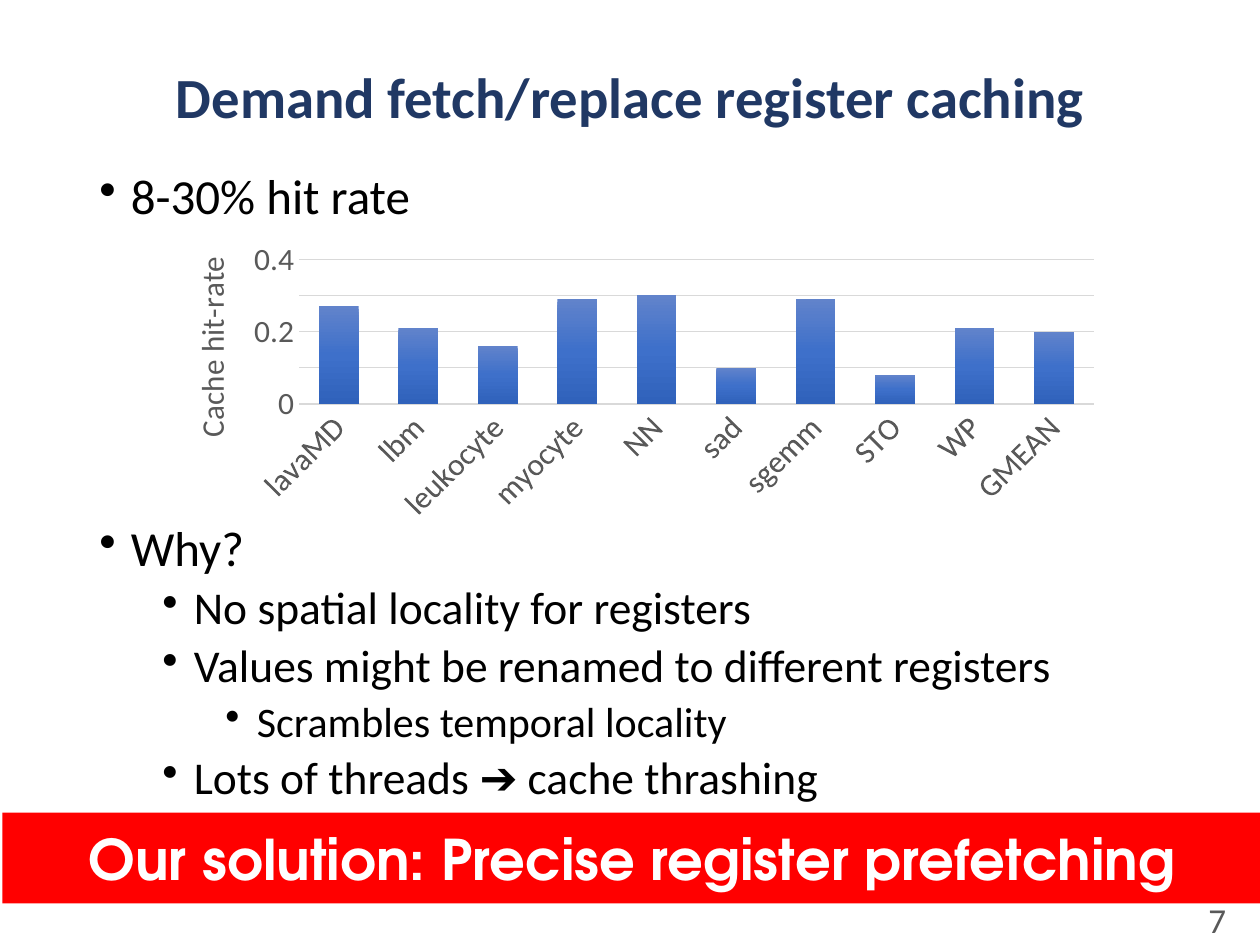
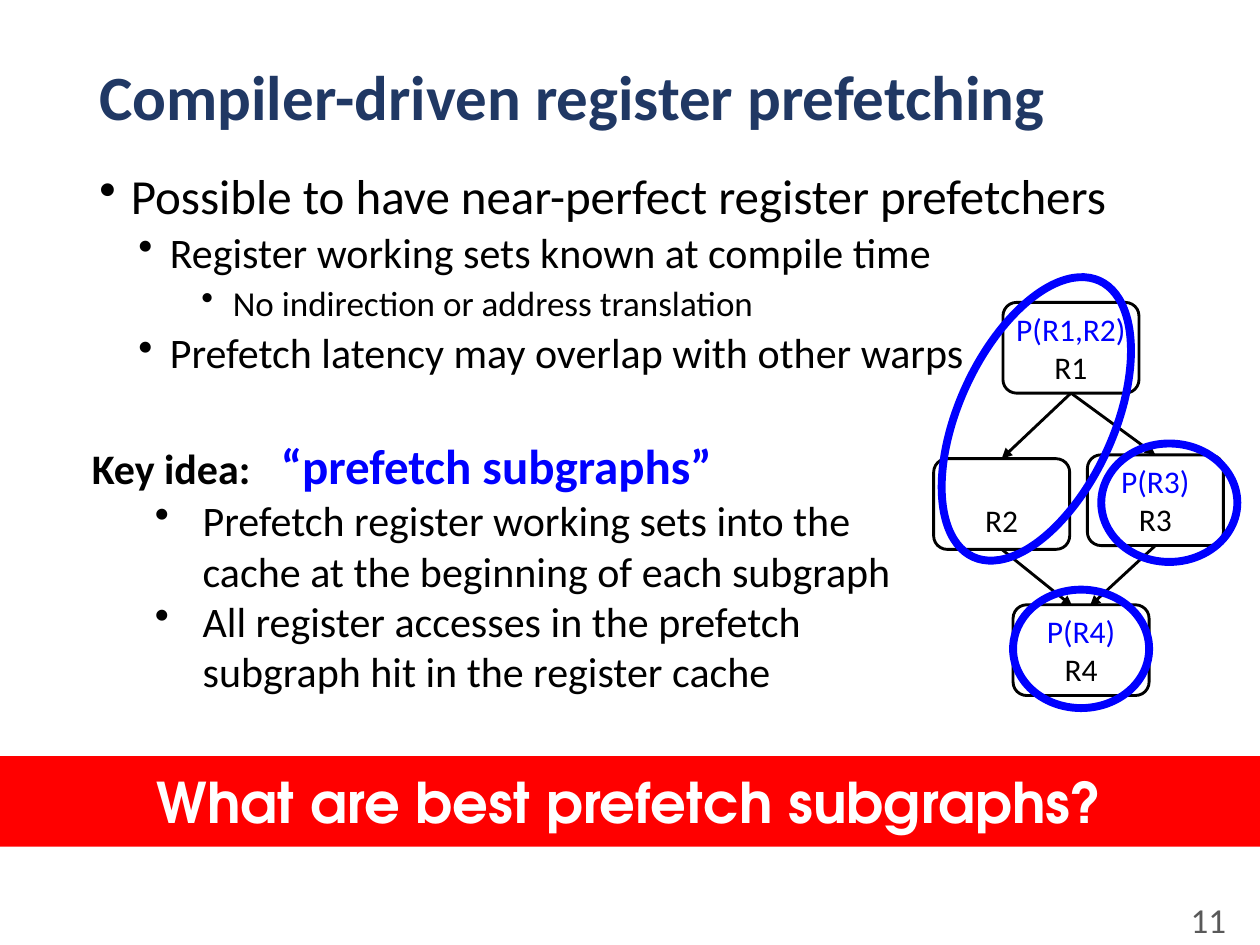
import dataclasses

import pptx
import pptx.chart.data
import pptx.dml.color
import pptx.enum.chart
import pptx.enum.dml
import pptx.enum.shapes
import pptx.enum.text
import pptx.oxml
import pptx.oxml.ns
import pptx.util

EMU_PER_PX = 9144  # 100 px to the inch
ALIGN = pptx.enum.text.PP_ALIGN
ANCHOR = pptx.enum.text.MSO_ANCHOR
SHAPE = pptx.enum.shapes.MSO_SHAPE
TOP, BOTTOM = 0, 2  # connection sites of a rectangle


@dataclasses.dataclass(frozen=True)
class Theme:
    body_font: str = "Calibri"
    banner_font: str = "TeX Gyre Adventor"
    title: str = "203864"
    text: str = "000000"
    muted: str = "595959"
    accent: str = "0000FF"
    banner: str = "FF0000"
    paper: str = "FFFFFF"
    grid: str = "D9D9D9"
    bar_stops: tuple = ((0, "6183CB"), (50, "3E70CA"), (100, "3062BB"))
    first_size: int = 28
    body_size: int = 24
    banner_size: int = 32
    number_size: int = 20
    label_size: int = 18
    edge_width: float = 1.63
    ring_width: float = 4.5


THEME = Theme()


def px(*lengths):
    return [pptx.util.Emu(round(length * EMU_PER_PX)) for length in lengths]


def rgb(color):
    return pptx.dml.color.RGBColor.from_string(color)


def style_font(font, size, color, bold=False, name=THEME.body_font):
    font.size = pptx.util.Pt(size)
    font.color.rgb = rgb(color)
    font.bold = bold
    font.name = name


def write_para(frame, text, *, size=THEME.body_size, color=THEME.text, bold=False,
               font=THEME.body_font, align=ALIGN.LEFT, spacing=None, before=0,
               level=0, bullet=None):
    """Add a paragraph; text is a string or a list of (string, format changes).

    bullet is (left margin, hanging width) in px.
    """
    para = frame.paragraphs[0]
    if para.runs:
        para = frame.add_paragraph()
    para.alignment = align
    para.level = level
    para.space_before = pptx.util.Pt(before)
    if spacing:
        para.line_spacing = spacing
    if bullet:
        margin, hanging = px(*bullet)
        properties = para._p.get_or_add_pPr()
        properties.set("marL", str(margin))
        properties.set("indent", str(-hanging))
        mark = pptx.oxml.parse_xml(
            f'<a:buChar {pptx.oxml.ns.nsdecls("a")} char="•"/>')
        properties.append(mark)
    for words, changes in [(text, {})] if isinstance(text, str) else text:
        span = para.add_run()
        span.text = words
        look = {"size": size, "color": color, "bold": bold, "name": font}
        style_font(span.font, **{**look, **changes})


def add_text_box(page, place, anchor=ANCHOR.TOP):
    frame = page.shapes.add_textbox(*px(*place)).text_frame
    frame.word_wrap = True
    frame.vertical_anchor = anchor
    return frame


def add_outline(page, place, sizes):
    """Add (level, text) bullets, with one type size per level."""
    frame = add_text_box(page, place)
    return write_outline_into(frame, sizes)


def write_outline_into(frame, sizes):
    def write(level, text):
        write_para(frame, text, size=sizes[level], level=level, spacing=0.9,
                   before=5 if level else 10, bullet=(25 + 50 * level, 25))
    return write


def add_shape(page, kind, place, fill=None, line=None, width=1):
    shape = page.shapes.add_shape(kind, *px(*place))
    shape.shadow.inherit = False
    for paint, color in ((shape.fill, fill), (shape.line.fill, line)):
        if color:
            paint.solid()
            paint.fore_color.rgb = rgb(color)
        else:
            paint.background()
    if line:
        shape.line.width = pptx.util.Pt(width)
    return shape


def add_title(page, text, width, size, align):
    frame = add_text_box(page, (69, 40, width, 79), ANCHOR.MIDDLE)
    write_para(frame, text, size=size, color=THEME.title, bold=True,
               align=align, spacing=0.9)


def add_page_number(page, number):
    frame = add_text_box(page, (758, 710, 225, 40), ANCHOR.MIDDLE)
    write_para(frame, str(number), size=THEME.number_size, color=THEME.muted,
               align=ALIGN.RIGHT)


def add_banner(page, text, left, top):
    frame = add_shape(page, SHAPE.RECTANGLE, (left, top, 1000, 72),
                      fill=THEME.banner).text_frame
    frame.word_wrap = True
    frame.vertical_anchor = ANCHOR.MIDDLE
    write_para(frame, text, size=THEME.banner_size, color=THEME.paper, bold=True,
               font=THEME.banner_font, align=ALIGN.CENTER)


def add_node(page, left, top, prefetch, register):
    """Add a block of the control-flow graph; its prefetch line may be absent."""
    node = add_shape(page, SHAPE.ROUNDED_RECTANGLE, (left, top, 108, 72),
                     THEME.paper, THEME.text, THEME.edge_width)
    node.adjustments[0] = 0.15
    frame = node.text_frame
    frame.word_wrap = False
    frame.margin_top, frame.margin_bottom = px(5, 5)
    frame.vertical_anchor = ANCHOR.MIDDLE if prefetch else ANCHOR.BOTTOM
    for text, color in ((prefetch, THEME.accent), (register, THEME.text)):
        if text:
            write_para(frame, text, size=THEME.label_size, color=color,
                       align=ALIGN.CENTER)
    return node


def add_arrow(page, source, target=None, end=(0, 0)):
    """Lead from the bottom of source to the top of target, or to the point end."""
    arrow = page.shapes.add_connector(
        pptx.enum.shapes.MSO_CONNECTOR.STRAIGHT, *px(0, 0, *end))
    arrow.begin_connect(source, BOTTOM)
    if target is not None:
        arrow.end_connect(target, TOP)
    arrow.line.width = pptx.util.Pt(THEME.edge_width)
    arrow.line.color.rgb = rgb(THEME.text)
    space = pptx.oxml.ns.nsdecls("a")
    arrow.line._get_or_add_ln().append(
        pptx.oxml.parse_xml(f'<a:tailEnd {space} type="triangle"/>'))
    arrow._element.spPr.append(pptx.oxml.parse_xml(f"<a:effectLst {space}/>"))


def add_ring(page, place, rotation=0):
    ring = add_shape(page, SHAPE.OVAL, place, line=THEME.accent,
                     width=THEME.ring_width)
    ring.rotation = rotation


def set_layout(element, position, **parts):
    """Give a chart part a manual layout, as shares of the chart."""
    for old in element.findall(pptx.oxml.ns.qn("c:layout")):
        element.remove(old)
    inner = '<c:layoutTarget val="inner"/>' if "w" in parts else ""
    modes = "".join(f'<c:{key}Mode val="edge"/>' for key in "xy")
    values = "".join(f'<c:{key} val="{value}"/>' for key, value in parts.items())
    element.insert(position, pptx.oxml.parse_xml(
        f'<c:layout {pptx.oxml.ns.nsdecls("c")}><c:manualLayout>'
        f"{inner}{modes}{values}</c:manualLayout></c:layout>"))


def fill_gradient(series, stops):
    marks = "".join(f'<a:gs pos="{share * 1000}"><a:srgbClr val="{color}"/></a:gs>'
                    for share, color in stops)
    series._element.get_or_add_spPr().append(pptx.oxml.parse_xml(
        f'<a:gradFill {pptx.oxml.ns.nsdecls("a")}><a:gsLst>{marks}</a:gsLst>'
        '<a:lin ang="5400000" scaled="0"/></a:gradFill>'))


def add_hit_rate_chart(page, place, rates):
    data = pptx.chart.data.CategoryChartData()
    data.categories = list(rates)
    data.add_series("Series 1", list(rates.values()))
    chart = page.shapes.add_chart(
        pptx.enum.chart.XL_CHART_TYPE.COLUMN_CLUSTERED, *px(*place), data).chart
    chart.has_legend = False
    chart.has_title = False
    style_font(chart.font, THEME.label_size, THEME.text)
    plot = chart.plots[0]
    plot.gap_width, plot.overlap, plot.vary_by_categories = 100, -24, False
    plot.series[0].invert_if_negative = False
    fill_gradient(plot.series[0], THEME.bar_stops)

    names, scale = chart.category_axis, chart.value_axis
    for axis in (names, scale):
        axis.major_tick_mark = pptx.enum.chart.XL_TICK_MARK.NONE
        axis.minor_tick_mark = pptx.enum.chart.XL_TICK_MARK.NONE
        style_font(axis.tick_labels.font, THEME.label_size, THEME.muted)
    names.format.line.color.rgb = rgb(THEME.grid)
    names.format.line.width = pptx.util.Pt(1)
    names._element.txPr.bodyPr.set("rot", "-2700000")
    scale.minimum_scale, scale.maximum_scale, scale.major_unit = 0, 0.4, 0.1
    scale.tick_labels.number_format = "General"
    scale.tick_labels.number_format_is_linked = False
    scale.format.line.fill.background()
    scale.major_gridlines.format.line.color.rgb = rgb(THEME.grid)
    scale.major_gridlines.format.line.width = pptx.util.Pt(0.75)

    title = scale.axis_title
    write_para(title.text_frame, "Cache hit-rate", size=THEME.label_size,
               color=THEME.muted, align=ALIGN.CENTER)
    title.text_frame._txBody.bodyPr.set("rot", "-5400000")
    title.text_frame._txBody.bodyPr.set("vert", "horz")
    set_layout(title._element, 1, x=0.02, y=0.03)
    set_layout(chart._chartSpace.chart.plotArea, 0, x=0.14, y=0.05, w=0.83, h=0.49)


def build_caching_page(page):
    add_title(page, "Demand fetch/replace register caching", 862, 32.4, ALIGN.CENTER)
    sizes = (THEME.first_size, 26, THEME.body_size)
    add_outline(page, (69, 132, 862, 54), sizes)(0, "8-30% hit rate")
    reason = add_outline(page, (69, 411, 862, 234), sizes)
    reason(0, "Why?")
    reason(1, "No spatial locality for registers")
    reason(1, "Values might be renamed to different registers")
    reason(2, "Scrambles temporal locality")
    reason(1, "Lots of threads ➔ cache thrashing")
    add_page_number(page, 7)
    add_hit_rate_chart(page, (131, 191, 760, 237), {
        "lavaMD": 0.27, "lbm": 0.21, "leukocyte": 0.16, "myocyte": 0.29, "NN": 0.3,
        "sad": 0.1, "sgemm": 0.29, "STO": 0.08, "WP": 0.21, "GMEAN": 0.2})
    add_banner(page, "Our solution: Precise register prefetching", 2, 645)


def add_subgraphs(page):
    entry = add_node(page, 796, 240, "P(R1,R2)", "R1")
    right = add_node(page, 863, 361, "P(R3)", "R3")
    left = add_node(page, 741, 364, None, "R2")
    add_node(page, 804, 480, "P(R4)", "R4")
    add_arrow(page, entry, right)
    add_arrow(page, entry, left)
    add_arrow(page, left, end=(851, 481))
    add_arrow(page, right, end=(865, 481))
    add_ring(page, (761, 212, 123, 241), rotation=24.6)
    add_ring(page, (804, 468, 108, 94))
    add_ring(page, (874, 352, 108, 94))


def build_prefetching_page(page):
    add_title(page, "Compiler-driven register prefetching", 919, 36, ALIGN.LEFT)
    sizes = (THEME.first_size, THEME.body_size, 20)
    add_outline(page, (69, 132, 914, 54), sizes)(
        0, "Possible to have near-perfect register prefetchers")
    add_page_number(page, 11)
    detail = add_outline(page, (50, 179, 762, 140), sizes)
    detail(1, "Register working sets known at compile time")
    detail(2, "No indirection or address translation")
    detail(1, "Prefetch latency may overlap with other warps")
    add_subgraphs(page)

    idea = add_text_box(page, (63, 341, 698, 337))
    write_para(idea, [("Key idea: \t", {}),
                      ("“prefetch subgraphs”",
                       {"size": THEME.first_size, "color": THEME.accent})], bold=True)
    for point in (
            "Prefetch register working sets into the cache at the beginning of each subgraph",
            "All register accesses in the prefetch subgraph hit in the register cache"):
        write_para(idea, point, level=1, bullet=(88, 38))
    add_banner(page, "What are best prefetch subgraphs?", 0, 600)


def main():
    deck = pptx.Presentation()
    deck.slide_width, deck.slide_height = px(1000, 750)
    for build in (build_caching_page, build_prefetching_page):
        build(deck.slides.add_slide(deck.slide_layouts[6]))
    deck.save("out.pptx")


if __name__ == "__main__":
    main()
